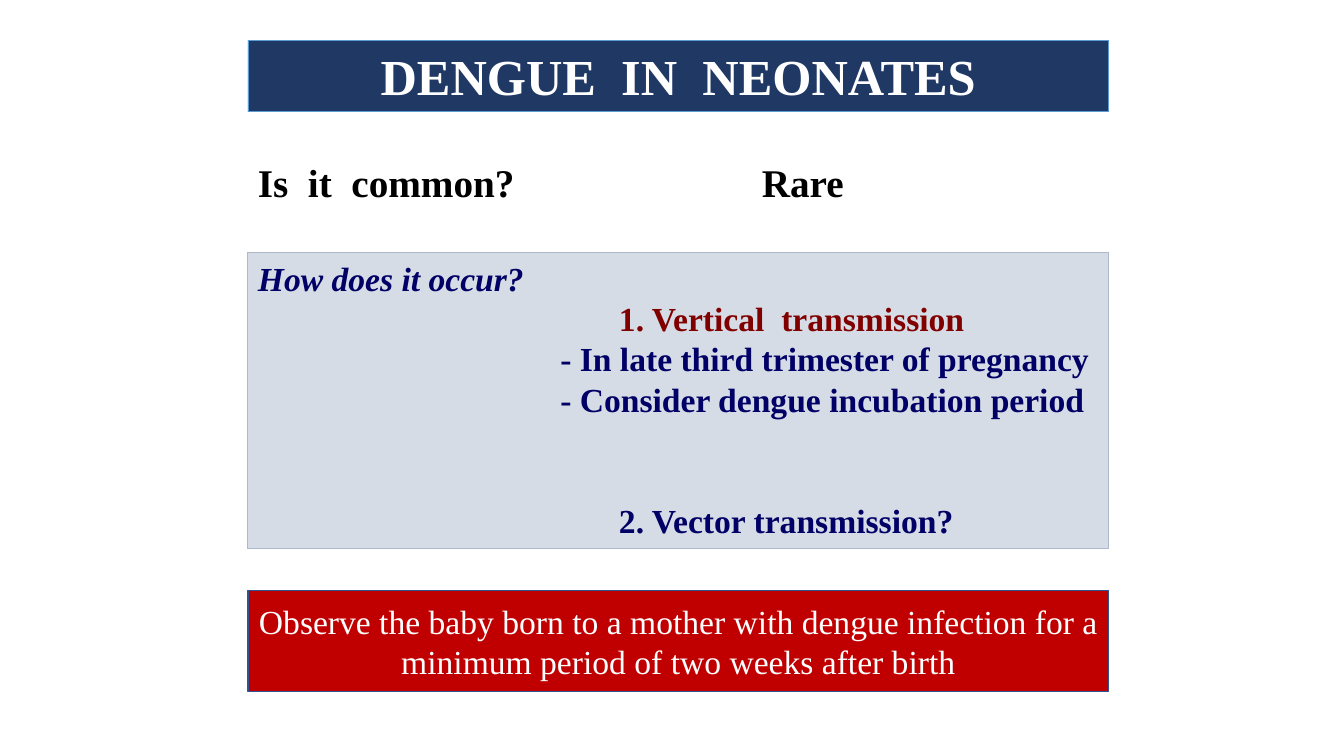
from lxml.etree import SubElement
from pptx import Presentation
from pptx.dml.color import RGBColor
from pptx.enum.shapes import MSO_SHAPE as Shape
from pptx.enum.text import MSO_ANCHOR as Anchor, PP_ALIGN as Align
from pptx.oxml.ns import qn
from pptx.util import Cm, Pt

LEFT, WIDTH = Cm(6.25), Cm(21.69)
NAVY, MAROON, WHITE = "000066", "800000", "FFFFFF"


def color(hex_string):
    return RGBColor.from_string(hex_string)


def add_text(paragraph, text, size, hex_string, bold=True, italic=False):
    run = paragraph.add_run()
    run.text = text
    font = run.font
    font.name, font.size = "Times New Roman", Pt(size)
    font.bold, font.italic = bold, italic
    font.color.rgb = color(hex_string)


presentation = Presentation()
presentation.slide_width, presentation.slide_height = Cm(33.87), Cm(19.05)
slide = presentation.slides.add_slide(presentation.slide_layouts[6])

# Coloured panels: top, height, fill, line, line width, anchor
frames = []
for top, height, fill, line, line_width, anchor in [
    (1.02, 1.8, "203864", "5B9BD5", 0.5, Anchor.TOP),
    (6.37, 7.45, "D6DCE5", "ADB9CA", 0.75, Anchor.TOP),
    (14.88, 2.54, "C00000", "325491", 1, Anchor.MIDDLE),
]:
    shape = slide.shapes.add_shape(Shape.RECTANGLE, LEFT, Cm(top), WIDTH, Cm(height))
    shape.shadow.inherit = False
    shape.fill.solid()
    shape.fill.fore_color.rgb = color(fill)
    shape.line.color.rgb = color(line)
    shape.line.width = Pt(line_width)
    frame = shape.text_frame
    frame.word_wrap = True
    frame.vertical_anchor = anchor
    frames.append(frame)
title, causes, advice = frames

# Title and closing advice
for frame, text, size, bold in [
    (title, "DENGUE  IN  NEONATES", 36, True),
    (advice, "Observe the baby born to a mother with dengue infection "
             "for a minimum period of two weeks after birth", 24, False),
]:
    paragraph = frame.paragraphs[0]
    paragraph.alignment = Align.CENTER
    add_text(paragraph, text, size, WHITE, bold)

# Question and answer, set apart by a tab stop
question = slide.shapes.add_textbox(LEFT, Cm(3.86), Cm(21.39), Cm(1.45))
question.text_frame.word_wrap = True
paragraph = question.text_frame.paragraphs[0]
tabs = SubElement(paragraph._p.get_or_add_pPr(), qn("a:tabLst"))
SubElement(tabs, qn("a:tab"), pos=str(Cm(12.7)), algn="l")
add_text(paragraph, "Is  it  common?\tRare", 28, "000000")

# Ways of transmission: text, indent in cm, space before in points, colour, italic
for number, (text, indent, space, hex_string, italic) in enumerate([
    ("How does it occur?", 0, 0, NAVY, True),
    ("1. Vertical  transmission", 9.1, 0, MAROON, False),
    ("- In late third trimester of pregnancy", 7.62, 0, NAVY, False),
    ("- Consider dengue incubation period", 7.62, 0, NAVY, False),
    ("2. Vector transmission?", 9.1, 57.6, NAVY, False),
]):
    paragraph = causes.add_paragraph() if number else causes.paragraphs[0]
    paragraph.alignment = Align.LEFT
    paragraph._p.get_or_add_pPr().set("marL", str(Cm(indent)))
    if space:
        paragraph.space_before = Pt(space)
    add_text(paragraph, text, 24, hex_string, italic=italic)

presentation.save("out.pptx")
